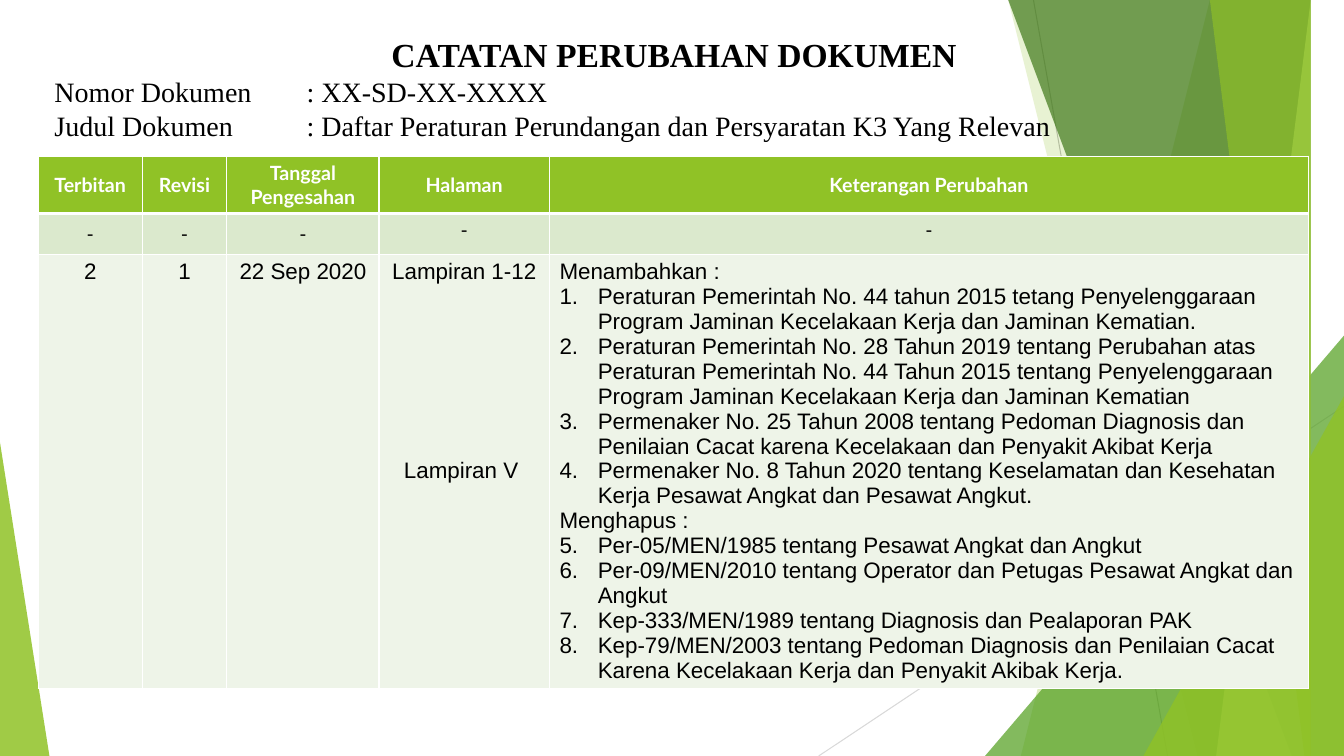
from lxml import etree
from pptx import Presentation
from pptx import util as u
from pptx.dml.color import RGBColor
from pptx.enum import shapes, text
from pptx.oxml.ns import qn

WIDTH, HEIGHT = 13.33, 7.5
BLACK, WHITE = RGBColor(0, 0, 0), RGBColor(255, 255, 255)
GREEN = RGBColor(0x90, 0xC2, 0x26)
MID_GREEN = RGBColor(0x54, 0xA0, 0x21)
DARK_GREEN = RGBColor(0x3F, 0x78, 0x19)
LIME = RGBColor(0xC0, 0xE4, 0x74)
BAND_DARK, BAND_LIGHT = RGBColor(0xDB, 0xE9, 0xCD), RGBColor(0xEE, 0xF4, 0xE8)
GREY, PALE_GREY = RGBColor(0xBF, 0xBF, 0xBF), RGBColor(0xD9, 0xD9, 0xD9)

TITLE = "CATATAN PERUBAHAN DOKUMEN"
DETAILS = [
    "Nomor Dokumen\t\t: XX-SD-XX-XXXX",
    "Judul Dokumen \t\t: Daftar Peraturan Perundangan dan Persyaratan K3 Yang Relevan",
]
HEADERS = ["Terbitan", "Revisi", "Tanggal Pengesahan", "Halaman", "Keterangan Perubahan"]
EMPTY_ENTRY = ["-"] * len(HEADERS)
REVISION = ["2", "1", "22 Sep 2020"]
PAGES = ["Lampiran 1-12", "Lampiran V "]
CHANGES = [
    ("Menambahkan :", [
        "Peraturan Pemerintah No. 44 tahun 2015 tetang Penyelenggaraan Program Jaminan "
        "Kecelakaan Kerja dan Jaminan Kematian.",
        "Peraturan Pemerintah No. 28 Tahun 2019 tentang Perubahan atas Peraturan Pemerintah "
        "No. 44 Tahun 2015 tentang Penyelenggaraan Program Jaminan Kecelakaan Kerja dan "
        "Jaminan Kematian",
        "Permenaker No. 25 Tahun 2008 tentang Pedoman Diagnosis dan Penilaian Cacat karena "
        "Kecelakaan dan Penyakit Akibat Kerja",
        "Permenaker No. 8 Tahun 2020 tentang Keselamatan dan Kesehatan Kerja Pesawat Angkat "
        "dan Pesawat Angkut.",
    ]),
    ("Menghapus :", [
        "Per-05/MEN/1985 tentang Pesawat Angkat dan Angkut",
        "Per-09/MEN/2010 tentang Operator dan Petugas Pesawat Angkat dan Angkut",
        "Kep-333/MEN/1989 tentang Diagnosis dan Pealaporan PAK",
        "Kep-79/MEN/2003 tentang Pedoman Diagnosis dan Penilaian Cacat Karena Kecelakaan "
        "Kerja dan Penyakit Akibak Kerja.",
    ]),
]
COLUMNS = [1.03, 0.84, 1.51, 1.69, 7.53]
ROWS = [0.56, 0.41, 4.3]
TABLE_LEFT, TABLE_TOP = 0.38, 1.55

LINES = [((10.25, 0), (11.58, HEIGHT), GREY), ((WIDTH, 4.03), (8.12, HEIGHT), PALE_GREY)]
# Bands reach the right edge: (top x, bottom x, colour, opacity).
# Triangles stand on the bottom edge: (left, width, height, apex share, colour, opacity).
BACKDROP = [
    (12.28, 10.04, GREEN, 30),
    (10.5, 11.83, GREEN, 20),
    (9.77, 3.56, 4.17, 1, MID_GREEN, 72),
    (10.21, 12.91, DARK_GREEN, 70),
    (13.03, 11.92, LIME, 70),
    (11.96, 13.18, GREEN, 65),
    (11.34, 1.99, 3.57, 1, GREEN, 80),
    (0, 0.49, 3.11, 0, GREEN, 85),
]


def paint(shape, color, opacity):
    shape.shadow.inherit = False
    shape.line.fill.background()
    shape.fill.solid()
    shape.fill.fore_color.rgb = color
    value = shape.fill._xPr.find(".//" + qn("a:srgbClr"))
    etree.SubElement(value, qn("a:alpha"), val=str(opacity * 1000))


def draw_backdrop(page):
    for start, end, color in LINES:
        line = page.shapes.add_connector(
            shapes.MSO_CONNECTOR.STRAIGHT, *(u.Inches(n) for n in start + end))
        line.line.color.rgb = color
        line.line.width = u.Pt(0.75)
        etree.SubElement(line._element.spPr, qn("a:effectLst"))
    for *geometry, color, opacity in BACKDROP:
        if len(geometry) == 2:
            top, bottom = geometry
            outline = page.shapes.build_freeform(top, 0, scale=u.Inches(1))
            outline.add_line_segments([(WIDTH, 0), (WIDTH, HEIGHT), (bottom, HEIGHT)])
            shape = outline.convert_to_shape()
        else:
            left, width, height, apex = geometry
            shape = page.shapes.add_shape(
                shapes.MSO_SHAPE.ISOSCELES_TRIANGLE,
                *(u.Inches(n) for n in (left, HEIGHT - height, width, height)))
            shape.adjustments[0] = apex
        paint(shape, color, opacity)


def write(frame, words, size=16, font="Arial", color=BLACK, bold=False,
          align=text.PP_ALIGN.CENTER, before=0):
    """Fill the frame's blank first paragraph, or add one below, and return it."""
    para = frame.paragraphs[0]
    if para.runs:
        para = frame.add_paragraph()
    para.alignment = align
    para.space_before = u.Pt(before)
    span = para.add_run()
    span.text = words
    span.font.size, span.font.name, span.font.bold = u.Pt(size), font, bold
    span.font.color.rgb = color
    return para


def number(para, start):
    props = para._p.get_or_add_pPr()
    indent = u.Inches(0.38)
    props.set("marL", str(indent))
    props.set("indent", str(-indent))
    etree.SubElement(props, qn("a:buFont"), typeface="+mj-lt")
    etree.SubElement(props, qn("a:buAutoNum"), type="arabicPeriod", startAt=str(start))


def add_tabs(para, *stops):
    tabs = etree.SubElement(para._p.get_or_add_pPr(), qn("a:tabLst"))
    for stop in stops:
        etree.SubElement(tabs, qn("a:tab"), pos=str(u.Inches(stop)), algn="l")


def style_cell(cell, color, bottom=1):
    props = cell._tc.get_or_add_tcPr()
    for side, width in (("L", 1), ("R", 1), ("T", 1), ("B", bottom)):
        border = etree.SubElement(props, qn("a:ln" + side), w=str(u.Pt(width)))
        fill = etree.SubElement(border, qn("a:solidFill"))
        etree.SubElement(fill, qn("a:srgbClr"), val=str(WHITE))
    cell.fill.solid()
    cell.fill.fore_color.rgb = color


def draw_table(page):
    table = page.shapes.add_table(
        len(ROWS), len(COLUMNS),
        *(u.Inches(n) for n in (TABLE_LEFT, TABLE_TOP, sum(COLUMNS), sum(ROWS)))).table
    for column, width in zip(table.columns, COLUMNS):
        column.width = u.Inches(width)
    for row, height in zip(table.rows, ROWS):
        row.height = u.Inches(height)

    for index, (header, entry) in enumerate(zip(HEADERS, EMPTY_ENTRY)):
        head, blank, body = (table.cell(row, index) for row in range(len(ROWS)))
        style_cell(head, GREEN, bottom=3)
        style_cell(blank, BAND_DARK)
        style_cell(body, BAND_LIGHT)
        head.vertical_anchor = text.MSO_ANCHOR.MIDDLE
        if index < len(REVISION):
            blank.vertical_anchor = text.MSO_ANCHOR.MIDDLE
            write(body.text_frame, REVISION[index])
        write(head.text_frame, header, size=14, font="Lato", color=WHITE, bold=True)
        write(blank.text_frame, entry, size=14, font="Lato")

    pages, changes = (table.cell(2, index).text_frame for index in (3, 4))
    for words, gap in zip(PAGES, (0, 124)):
        write(pages, words, before=gap)
    start = 1
    for heading, items in CHANGES:
        write(changes, heading, align=text.PP_ALIGN.LEFT)
        for item in items:
            number(write(changes, item, align=text.PP_ALIGN.LEFT), start)
        start += len(items)


def draw_title(page):
    box = page.shapes.title
    box.left, box.top, box.width, box.height = (
        u.Inches(n) for n in (0.44, 0.29, 12.49, 1.18))
    frame = box.text_frame
    frame.word_wrap = True
    frame.auto_size = text.MSO_AUTO_SIZE.NONE
    frame.vertical_anchor = text.MSO_ANCHOR.TOP
    write(frame, TITLE, size=24, font="Times New Roman", bold=True)
    for detail in DETAILS:
        para = write(frame, detail, size=20, font="Times New Roman",
                     align=text.PP_ALIGN.JUSTIFY)
        add_tabs(para, 2, 2.5)
    page.shapes._spTree.append(box._element)  # in front of the backdrop


def main():
    deck = Presentation()
    deck.slide_width, deck.slide_height = u.Inches(WIDTH), u.Inches(HEIGHT)
    page = deck.slides.add_slide(deck.slide_layouts[5])
    draw_backdrop(page)
    draw_table(page)
    draw_title(page)
    deck.save("out.pptx")


if __name__ == "__main__":
    main()
